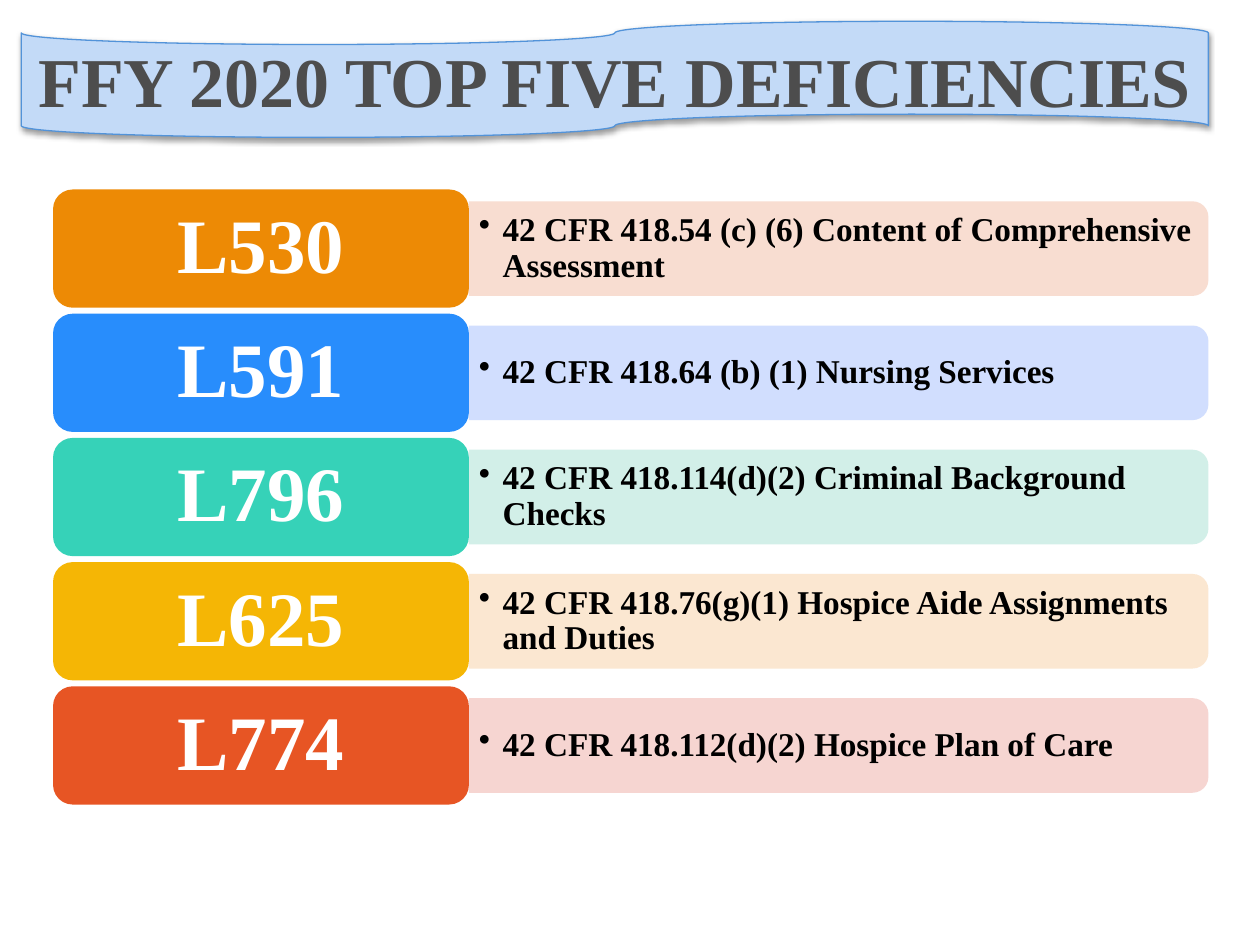
import dataclasses

import pptx
import pptx.dml.color
import pptx.enum.shapes
import pptx.enum.text
import pptx.oxml
import pptx.oxml.ns
import pptx.util

Cm = pptx.util.Cm
Pt = pptx.util.Pt
RGB = pptx.dml.color.RGBColor.from_string
SHAPE = pptx.enum.shapes.MSO_SHAPE
ALIGN = pptx.enum.text.PP_ALIGN
MIDDLE = pptx.enum.text.MSO_ANCHOR.MIDDLE
NS = pptx.oxml.ns.nsdecls("a")


@dataclasses.dataclass(frozen=True)
class Theme:
    font: str = "Times New Roman"
    title_size: int = 40
    tag_size: int = 44
    detail_size: int = 19
    title_text: str = "4D4D4D"
    banner_fill: str = "C3DAF7"
    banner_line: str = "5293D9"
    tag_text: str = "FFFFFF"
    detail_text: str = "000000"


THEME = Theme()

# tag, regulation, tag colour, bar colour
DEFICIENCIES = [
    ("L530", "42 CFR 418.54 (c) (6) Content of Comprehensive Assessment", "ED8A05", "F8DACC"),
    ("L591", "42 CFR 418.64 (b) (1) Nursing Services", "288DFC", "CDDBFE"),
    ("L796", "42 CFR 418.114(d)(2) Criminal Background Checks", "36D2B8", "CEEEE6"),
    ("L625", "42 CFR 418.76(g)(1) Hospice Aide Assignments and Duties", "F5B605", "FBE5CC"),
    ("L774", "42 CFR 418.112(d)(2) Hospice Plan of Care", "E75524", "F6D1CD"),
]


def set_all(target, values):
    for attribute, value in values.items():
        setattr(target, attribute, value)


def add_block(slide, preset, left, top, width, height, color):
    """Add a flat, borderless shape; lengths are in centimetres."""
    block = slide.shapes.add_shape(preset, Cm(left), Cm(top), Cm(width), Cm(height))
    block.shadow.inherit = False
    block.fill.solid()
    block.fill.fore_color.rgb = RGB(color)
    block.line.fill.background()
    return block


def write(frame, text, size, color, margins, align, spacing=1.0):
    """Fill a text frame with one bold paragraph; margins are (side, end)."""
    side, end = map(Cm, margins)
    set_all(frame, dict(word_wrap=True, vertical_anchor=MIDDLE, margin_left=side,
                        margin_right=side, margin_top=end, margin_bottom=end))
    paragraph = frame.paragraphs[0]
    paragraph.text = text
    set_all(paragraph, dict(alignment=align, line_spacing=spacing))
    set_all(paragraph.font, dict(name=THEME.font, size=Pt(size), bold=True))
    paragraph.font.color.rgb = RGB(color)


def add_bullet(paragraph, indent):
    properties = paragraph._p.get_or_add_pPr()
    properties.set("marL", str(Cm(indent)))
    properties.set("indent", str(-Cm(indent)))
    properties.append(pptx.oxml.parse_xml(f'<a:buChar {NS} char="•"/>'))


def add_banner(slide, left, top, width, height):
    banner = add_block(slide, SHAPE.FLOWCHART_PUNCHED_TAPE, left, top, width, height,
                       THEME.banner_fill)
    banner.line.color.rgb = RGB(THEME.banner_line)
    banner.line.width = Pt(0.75)
    effects = banner._element.spPr.find(pptx.oxml.ns.qn("a:effectLst"))
    effects.append(pptx.oxml.parse_xml(
        f'<a:outerShdw {NS} blurRad="{Pt(3.1)}" dist="{Pt(1.6)}" dir="5400000" '
        'rotWithShape="0"><a:srgbClr val="000000"><a:alpha val="38000"/></a:srgbClr>'
        '</a:outerShdw>'))
    write(banner.text_frame, "FFY 2020 TOP FIVE DEFICIENCIES", THEME.title_size,
          THEME.title_text, (0.25, 0.13), ALIGN.CENTER)


def add_detail(slide, left, top, width, height, regulation, color):
    """Add a bar rounded on its right side, with a bulleted regulation on it."""
    # The bar stands upright around the box centre, then turns a quarter.
    bar = add_block(slide, SHAPE.ROUND_2_SAME_RECTANGLE, left + (width - height) / 2,
                    top + (height - width) / 2, height, width, color)
    bar.rotation = 90
    bar.fill._xPr.find(".//" + pptx.oxml.ns.qn("a:srgbClr")).append(
        pptx.oxml.parse_xml(f'<a:alpha {NS} val="90000"/>'))

    inset = 0.09
    detail = slide.shapes.add_textbox(Cm(left), Cm(top + inset), Cm(width - inset),
                                      Cm(height - 2 * inset))
    add_bullet(detail.text_frame.paragraphs[0], 0.48)
    write(detail.text_frame, regulation, THEME.detail_size, THEME.detail_text,
          (0.2, 0.1), ALIGN.LEFT, 0.9)


def add_deficiency_list(slide, left, top, width, height):
    gap = 0.12
    row_height = (height - gap * (len(DEFICIENCIES) - 1)) / len(DEFICIENCIES)
    tag_width = width * 0.36
    bar_height = row_height * 0.8
    for row, (code, regulation, tag_color, bar_color) in enumerate(DEFICIENCIES):
        row_top = top + row * (row_height + gap)
        add_detail(slide, left + tag_width, row_top + (row_height - bar_height) / 2,
                   width - tag_width, bar_height, regulation, bar_color)
        tag = add_block(slide, SHAPE.ROUNDED_RECTANGLE, left, row_top, tag_width,
                        row_height, tag_color)
        write(tag.text_frame, code, THEME.tag_size, THEME.tag_text, (0.46, 0.23),
              ALIGN.CENTER, 0.9)


def main():
    deck = pptx.Presentation()
    set_all(deck, dict(slide_width=Cm(25.4), slide_height=Cm(19.05)))
    slide = deck.slides.add_slide(deck.slide_layouts[6])
    add_banner(slide, 0.43, 0.43, 23.93, 2.34)
    add_deficiency_list(slide, 1.07, 3.82, 23.29, 12.4)
    deck.save("out.pptx")


if __name__ == "__main__":
    main()
